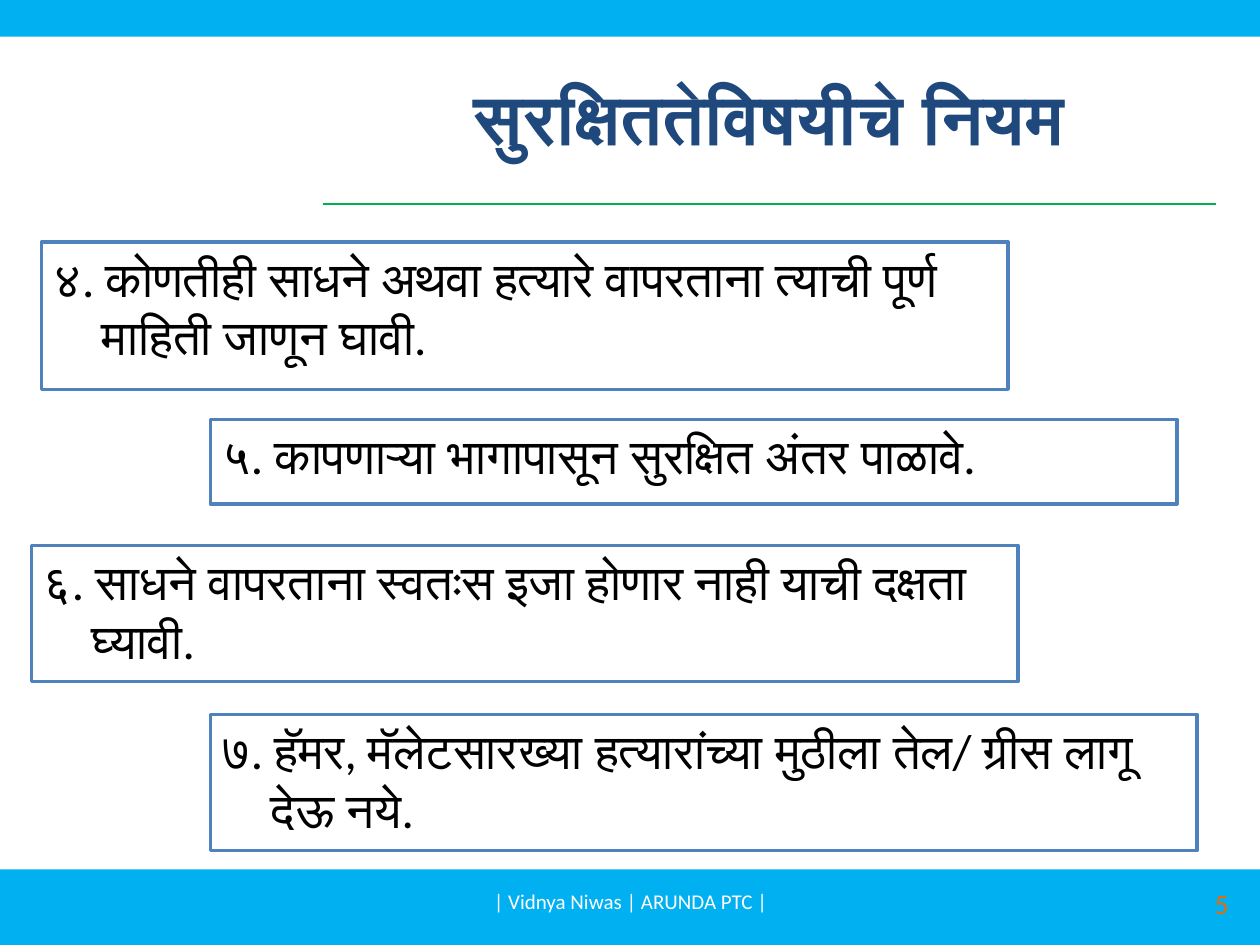
from dataclasses import dataclass

import pptx
import pptx.dml.color
import pptx.enum.shapes
import pptx.enum.text
import pptx.oxml
import pptx.oxml.ns
import pptx.util
from pptx.util import Inches

RGBColor = pptx.dml.color.RGBColor
Align = pptx.enum.text.PP_ALIGN
Anchor = pptx.enum.text.MSO_ANCHOR

SKY = RGBColor(0x00, 0xB0, 0xF0)
GREEN = RGBColor(0x00, 0xB0, 0x50)
NAVY = RGBColor(0x1F, 0x49, 0x7D)
BLUE = RGBColor(0x4F, 0x81, 0xBD)
ORANGE = RGBColor(0xE4, 0x6C, 0x0A)
WHITE = RGBColor(0xFF, 0xFF, 0xFF)
BLACK = RGBColor(0x00, 0x00, 0x00)
FONT = "Calibri"
HANG = Inches(0.38)


@dataclass
class Box:
    left: float
    top: float
    width: float
    height: float

    def lengths(self) -> list:
        return [Inches(v) for v in (self.left, self.top, self.width, self.height)]


@dataclass
class Rule:
    box: Box
    wording: str


RULES = [
    Rule(Box(0.33, 1.92, 7.67, 1.17),
         "४. कोणतीही साधने अथवा हत्यारे वापरताना त्याची पूर्ण माहिती जाणून घावी."),
    Rule(Box(1.67, 3.33, 7.67, 0.67),
         "५. कापणाऱ्या भागापासून सुरक्षित अंतर पाळावे."),
    Rule(Box(0.25, 4.33, 7.83, 1.08),
         "६. साधने वापरताना स्वतःस इजा होणार नाही याची दक्षता घ्यावी."),
    Rule(Box(1.67, 5.67, 7.83, 1.08),
         "७. हॅमर, मॅलेटसारख्या हत्यारांच्या मुठीला तेल/ ग्रीस लागू देऊ नये."),
]


def add_panel(slide, box: Box, fill: RGBColor):
    panel = slide.shapes.add_shape(
        pptx.enum.shapes.MSO_SHAPE.RECTANGLE, *box.lengths())
    panel.shadow.inherit = False
    panel.fill.solid()
    panel.fill.fore_color.rgb = fill
    panel.line.fill.background()
    return panel


def write(shape, wording: str, size: float, color: RGBColor, align: Align,
          anchor: Anchor = Anchor.MIDDLE, bold: bool = False):
    frame = shape.text_frame
    frame.word_wrap = True
    frame.vertical_anchor = anchor
    paragraph = frame.paragraphs[0]
    paragraph.text = wording
    paragraph.alignment = align
    paragraph.font.name = FONT
    paragraph.font.size = pptx.util.Pt(size)
    paragraph.font.bold = bold
    paragraph.font.color.rgb = color
    return paragraph


def add_label(slide, box: Box, wording: str, size: float, color: RGBColor,
              align: Align, bold: bool = False):
    label = slide.shapes.add_textbox(*box.lengths())
    return write(label, wording, size, color, align, bold=bold)


def add_rule(slide, rule: Rule) -> None:
    panel = add_panel(slide, rule.box, WHITE)
    panel.line.color.rgb = BLUE
    panel.line.width = pptx.util.Pt(2)
    paragraph = write(panel, rule.wording, 28, BLACK, Align.LEFT, Anchor.TOP)
    # Hanging indent behind the rule number
    properties = paragraph._p.get_or_add_pPr()
    properties.set("marL", str(HANG))
    properties.set("indent", str(-HANG))


def add_divider(slide, left: float, right: float, y: float) -> None:
    divider = slide.shapes.add_connector(
        pptx.enum.shapes.MSO_CONNECTOR.STRAIGHT,
        Inches(left), Inches(y), Inches(right), Inches(y))
    divider.line.color.rgb = GREEN
    divider.line.width = pptx.util.Pt(0.75)
    divider._element.spPr.append(pptx.oxml.parse_xml(
        f"<a:effectLst {pptx.oxml.ns.nsdecls('a')}/>"))


def main() -> None:
    deck = pptx.Presentation()
    deck.slide_width, deck.slide_height = Inches(10), Inches(7.5)
    slide = deck.slides.add_slide(deck.slide_layouts[6])

    # Bands and heading
    add_panel(slide, Box(0, 6.9, 10, 0.6), SKY)
    add_divider(slide, 2.56, 9.65, 1.62)
    add_panel(slide, Box(0, 0, 10, 0.29), SKY)
    add_label(slide, Box(2.56, 0.3, 7.09, 1.25), "सुरक्षिततेविषयीचे नियम",
              40, NAVY, Align.CENTER, bold=True)

    # Safety rules
    for rule in RULES:
        add_rule(slide, rule)

    # Footer
    add_label(slide, Box(3.42, 6.95, 3.17, 0.4), "| Vidnya Niwas | ARUNDA PTC |",
              12, WHITE, Align.CENTER)
    add_label(slide, Box(7.52, 6.97, 2.33, 0.4), "5", 16, ORANGE, Align.RIGHT)

    deck.save("out.pptx")


if __name__ == "__main__":
    main()
